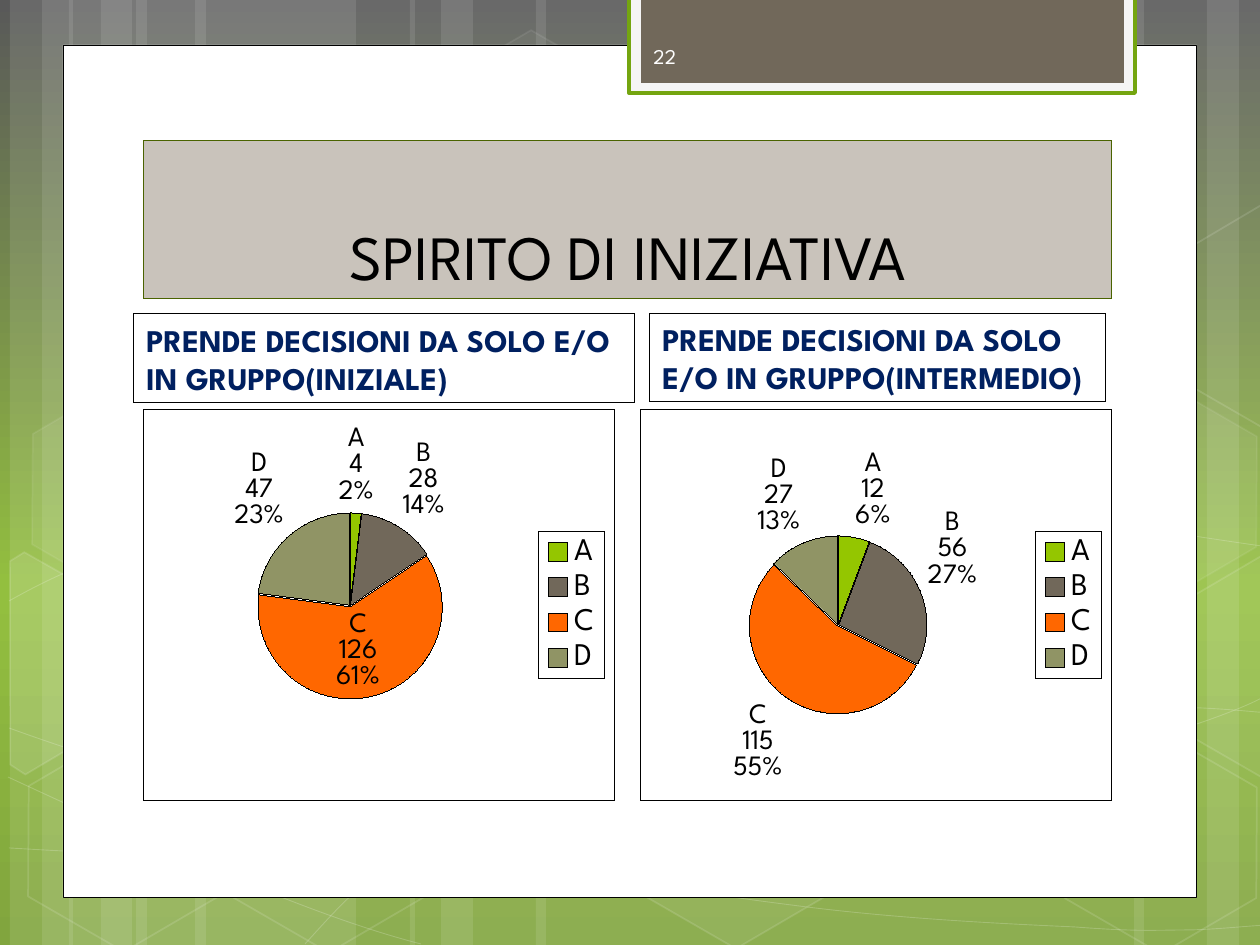
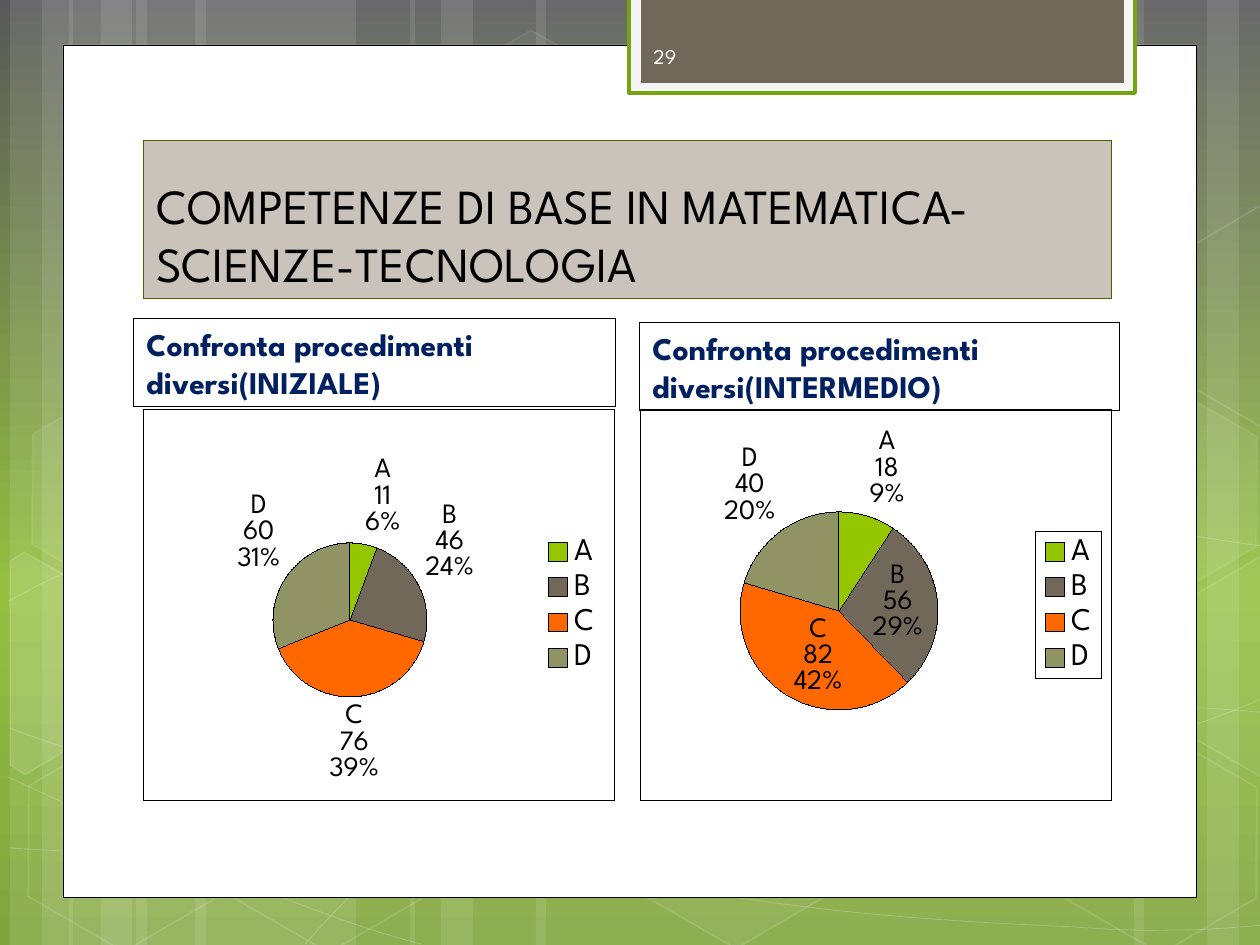
"""Builds two slides of pie charts on a green background with a framed page."""
from copy import deepcopy
from math import cos, radians, sin

from pptx import Presentation
from pptx import util as u
from pptx.chart.data import CategoryChartData
from pptx.dml.color import RGBColor
from pptx.enum import chart as ch, shapes, text
from pptx.oxml import parse_xml
from pptx.oxml.ns import nsdecls, qn
from pptx.oxml.xmlchemy import OxmlElement

SCALE = 914400 / 126
W, H = 1260, 945
FONT = "League Spartan"
RECT = shapes.MSO_SHAPE.RECTANGLE
HEXAGON = shapes.MSO_SHAPE.HEXAGON

WHITE = RGBColor(0xFF, 0xFF, 0xFF)
BLACK = RGBColor(0, 0, 0)
PALE = RGBColor(0xF5, 0xF5, 0xF5)
NUMBER = RGBColor(0xFE, 0xFE, 0xFE)
NAVY = RGBColor(0, 0x20, 0x60)
TITLE_FILL = RGBColor(0xC9, 0xC3, 0xBB)
TITLE_LINE = RGBColor(0x4A, 0x63, 0)
TAB_LINE = RGBColor(0x74, 0xA5, 0x10)
LIME = RGBColor(0x94, 0xC6, 0)
TAUPE = RGBColor(0x71, 0x68, 0x5A)
ORANGE = RGBColor(0xFF, 0x67, 0)
OLIVE = RGBColor(0x90, 0x94, 0x65)
SLICES = (LIME, TAUPE, ORANGE, OLIVE)
BACKDROP = ((0, RGBColor(0x59, 0x59, 0x59)), (0.62, RGBColor(0x93, 0xBF, 0x3F)),
            (1, RGBColor(0x81, 0xA5, 0x3E)))

BANDS = ((136, 220), (10, 63), (42, 105), (195, 220), (69, 63), (101, 105),
         (924, 220), (1207, 63), (1134, 105), (536, 388), (410, 63), (441, 105))
CURVES = (
    ((9, 848), (77, 852), (145, 856), (239, 854), (334, 853), (451, 851), (577, 838),
     (703, 825), (882, 801), (998, 777), (1113, 753), (1231, 717), (1269, 694)),
    ((9, 601), (45, 581), (82, 562), (152, 543), (224, 524), (326, 496), (437, 488),
     (549, 479), (685, 478), (824, 488), (963, 498), (1193, 537), (1269, 547)),
    ((8, 777), (159, 847), (311, 916), (421, 944)),
    ((9, 728), (48, 742), (88, 756), (161, 776), (234, 795), (344, 827), (450, 848),
     (554, 869), (687, 892), (791, 905), (896, 919), (1008, 924), (1075, 927),
     (1140, 932), (1158, 930), (1191, 930), (1223, 929), (1246, 926), (1269, 925)),
    ((305, 944), (328, 919), (350, 893), (381, 871), (411, 848), (454, 823), (489, 805),
     (524, 788), (546, 780), (592, 767), (638, 755), (722, 737), (766, 728),
     (811, 720), (818, 719), (857, 717), (896, 713), (958, 709), (1000, 708),
     (1045, 707), (1116, 708), (1116, 708), (1144, 708), (1172, 708), (1201, 708),
     (1223, 709), (1245, 711), (1256, 712), (1268, 713), (1264, 712), (1268, 713)),
)
HEXAGONS = ((421, 45, 4, 8), (626, 742, 6, 12), (14, 745, 0, 12), (18, 393, 7, 8),
            (219, 746, 0, 12), (949, 571, 10, 12), (1051, 747, 0, 12), (1051, 396, 7, 8))
CUT_HEXAGONS = (
    (((10, 561), (24, 552), (121, 607), (120, 718), (25, 774), (10, 765)), (45, 674), 10),
    (((1167, 611), (1261, 556), (1271, 562), (1271, 772), (1263, 777), (1167, 722)),
     (1241, 655), 4),
    (((1167, 261), (1261, 205), (1273, 212), (1271, 422), (1263, 427), (1167, 372)),
     (1241, 304), 0),
)
TILT = 30
CHART_TOP, CHART_W, CHART_H = 409, 472, 392


def px(n):
    return u.Emu(round(n * SCALE))


def box(*lengths):
    return [px(n) for n in lengths]


def paint(sp, fill=None, line=None, width=None, fill_alpha=100, line_alpha=100):
    sp.shadow.inherit = False
    for style_el in sp._element.findall(qn("p:style")):
        sp._element.remove(style_el)
    for fmt, color in ((sp.fill, fill), (sp.line.fill, line)):
        if color is None:
            fmt.background()
        else:
            fmt.solid()
            fmt.fore_color.rgb = color
    if width is not None:
        sp.line.width = u.Pt(width)
    for parent, alpha in (("p:spPr", fill_alpha), ("p:spPr/a:ln", line_alpha)):
        for clr in sp._element.xpath(f"{parent}/a:solidFill/a:srgbClr"):
            if alpha < 100:
                el = OxmlElement("a:alpha")
                el.set("val", str(alpha * 1000))
                clr.append(el)


def add_preset(s, kind, at, **look):
    sp = s.shapes.add_shape(kind, *box(*at))
    paint(sp, **look)
    return sp


def add_outline(s, points, close, **look):
    fb = s.shapes.build_freeform(*points[0], scale=SCALE)
    fb.add_line_segments(points[1:], close=close)
    sp = fb.convert_to_shape()
    paint(sp, **look)
    return sp


def add_curve(s, knots):
    sp = add_outline(s, knots, False, line=WHITE, width=0.5, line_alpha=20)
    segments = sp._element.xpath(".//a:lnTo")
    for i in range(0, len(segments), 3):
        bend = OxmlElement("a:cubicBezTo")
        segments[i].addprevious(bend)
        for segment in segments[i:i + 3]:
            bend.append(segment[0])
            segment.getparent().remove(segment)


def turn(point, center, degrees):
    a = radians(degrees)
    dx, dy = point[0] - center[0], point[1] - center[1]
    return (round(center[0] + dx * cos(a) - dy * sin(a)),
            round(center[1] + dx * sin(a) + dy * cos(a)))


def style(font, size, color, bold=False):
    font.name, font.size, font.bold = FONT, u.Pt(size), bold
    font.color.rgb = color


def write(sp, words, size, color, bold=False, align=text.PP_ALIGN.LEFT,
          anchor=text.MSO_ANCHOR.BOTTOM):
    tf = sp.text_frame
    tf.word_wrap = True
    tf.vertical_anchor = anchor
    p = tf.paragraphs[0]
    p.text, p.alignment = words, align
    style(p.font, size, color, bold)


def add_backdrop(s):
    fill = s.background.fill
    fill.gradient()
    fill.gradient_angle = 270
    stops = s._element.find(".//" + qn("a:gsLst"))
    stops.append(deepcopy(stops[0]))
    for stop, (pos, color) in zip(fill.gradient_stops, BACKDROP):
        stop.position, stop.color.rgb = pos, color
    for x, w in BANDS:
        add_preset(s, RECT, (x, 0, w, H), fill=WHITE, fill_alpha=10)
    for knots in CURVES:
        add_curve(s, knots)
    for x, y, fill_alpha, line_alpha in HEXAGONS:
        sp = add_preset(s, HEXAGON, (x, y, 220, 192), fill=WHITE if fill_alpha else None,
                        line=WHITE, width=1, fill_alpha=fill_alpha, line_alpha=line_alpha)
        sp.adjustments[0] = 0.285
        sp.rotation = TILT
    for points, center, alpha in CUT_HEXAGONS:
        upright = [turn(point, center, -TILT) for point in points]
        sp = add_outline(s, upright, True, fill=WHITE if alpha else None, line=WHITE,
                         width=1, fill_alpha=alpha, line_alpha=12)
        sp.rotation = TILT


def add_page(s, number):
    add_preset(s, RECT, (63, 45, 1134, 853), fill=WHITE, line=BLACK, width=0.5)
    add_preset(s, RECT, (629, -3, 506, 96), fill=PALE, line=TAB_LINE, width=2.25)
    add_preset(s, RECT, (641, -3, 483, 86), fill=TAUPE)
    tb = s.shapes.add_textbox(*box(641, 31, 184, 50))
    write(tb, number, 12, NUMBER, anchor=text.MSO_ANCHOR.MIDDLE)


def add_title(s, words, size, align):
    sp = add_preset(s, RECT, (144, 141, 968, 158), fill=TITLE_FILL, line=TITLE_LINE)
    write(sp, words, size, BLACK, align=align)


def add_heading(s, words, at):
    write(add_preset(s, RECT, at, line=BLACK), words, 18, NAVY, bold=True)


def frame(parent):
    parent.find(qn("c:txPr")).addprevious(parse_xml(
        f'<c:spPr {nsdecls("c", "a")}><a:noFill/><a:ln><a:solidFill>'
        f'<a:srgbClr val="{BLACK}"/></a:solidFill></a:ln></c:spPr>'))


def place_pie(chart, left, cx, cy, radius):
    area = chart._chartSpace.find(".//" + qn("c:plotArea"))
    for old in area.findall(qn("c:layout")):
        area.remove(old)
    parts = {"x": (cx - radius - left) / CHART_W, "y": (cy - radius - CHART_TOP) / CHART_H,
             "w": 2 * radius / CHART_W, "h": 2 * radius / CHART_H}
    modes = "".join(f'<c:{k}Mode val="edge"/>' for k in "xy")
    sizes = "".join(f'<c:{k} val="{v:.4f}"/>' for k, v in parts.items())
    area.insert(0, parse_xml(f'<c:layout {nsdecls("c")}><c:manualLayout>'
                             f'<c:layoutTarget val="inner"/>{modes}{sizes}'
                             f'</c:manualLayout></c:layout>'))


def label_slices(ser):
    dl = ser.data_labels
    dl.show_value = dl.show_percentage = dl.show_category_name = True
    dl.position = ch.XL_LABEL_POSITION.BEST_FIT
    style(dl.font, 16, BLACK)
    for flag in ser._element.xpath(".//c:showBubbleSize"):
        el = OxmlElement("c:separator")
        el.text = "\n"
        flag.addnext(el)


def add_pie(s, left, values, circle, explode=0, boxed_legend=True):
    data = CategoryChartData()
    data.categories = "ABCD"
    data.add_series("Series 1", values)
    chart = s.shapes.add_chart(ch.XL_CHART_TYPE.PIE, *box(left, CHART_TOP, CHART_W, CHART_H),
                               data).chart
    chart.has_title = False
    style(chart.font, 18, BLACK)
    frame(chart._chartSpace)
    chart.has_legend = True
    legend = chart.legend
    legend.position = ch.XL_LEGEND_POSITION.RIGHT
    legend.include_in_layout = False
    style(legend.font, 18, BLACK)
    if boxed_legend:
        frame(legend._element)
    chart.plots[0].vary_by_categories = True
    ser = chart.plots[0].series[0]
    ser.format.line.color.rgb = BLACK
    for i, color in enumerate(SLICES):
        fmt = ser.points[i].format
        fmt.fill.solid()
        fmt.fill.fore_color.rgb = color
        fmt.line.color.rgb = BLACK
    if explode:
        el = OxmlElement("c:explosion")
        el.set("val", str(explode))
        ser._element.find(qn("c:spPr")).addnext(el)
    label_slices(ser)
    place_pie(chart, left, *circle)


def add_base(prs, number, title, size, align):
    s = prs.slides.add_slide(prs.slide_layouts[6])
    add_backdrop(s)
    add_page(s, number)
    add_title(s, title, size, align)
    return s


def main():
    prs = Presentation()
    prs.slide_width, prs.slide_height = box(W, H)

    s = add_base(prs, "22", "SPIRITO DI INIZIATIVA", 36, text.PP_ALIGN.CENTER)
    add_heading(s, "PRENDE DECISIONI DA SOLO E/O IN GRUPPO(INIZIALE)", (134, 314, 501, 89))
    add_pie(s, 143, (4, 28, 126, 47), (350, 606, 93), explode=1)
    add_heading(s, "PRENDE DECISIONI DA SOLO E/O IN GRUPPO(INTERMEDIO)", (650, 314, 456, 88))
    add_pie(s, 640, (12, 56, 115, 27), (838, 625, 89), explode=1)

    s = add_base(prs, "29", "COMPETENZE DI BASE IN MATEMATICA-SCIENZE-TECNOLOGIA", 28,
                 text.PP_ALIGN.LEFT)
    add_heading(s, "Confronta procedimenti diversi(INIZIALE)", (134, 319, 482, 88))
    add_pie(s, 143, (11, 46, 76, 60), (350, 620, 77), boxed_legend=False)
    add_heading(s, "Confronta procedimenti diversi(INTERMEDIO)", (640, 323, 480, 88))
    add_pie(s, 640, (18, 56, 82, 40), (839, 611, 99))

    prs.save("out.pptx")


if __name__ == "__main__":
    main()
